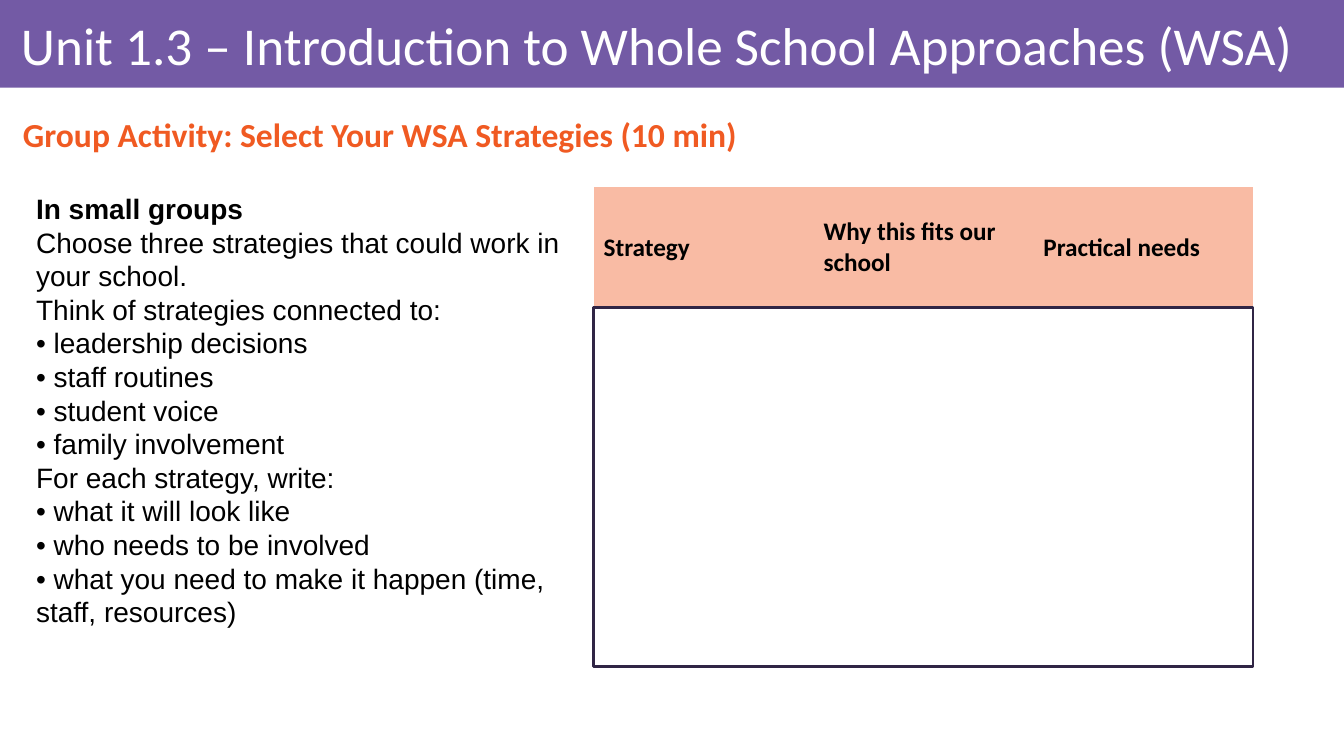
from dataclasses import dataclass

from pptx import Presentation
from pptx.dml.color import RGBColor
from pptx.enum.shapes import MSO_SHAPE as Shape
from pptx.enum.text import MSO_ANCHOR as Anchor
from pptx.oxml.ns import qn
from pptx.shapes.autoshape import Shape as AutoShape
from pptx.slide import Slide
from pptx.text.text import TextFrame, _Paragraph as Paragraph
from pptx.util import Cm, Pt

WHITE = RGBColor(0xFF, 0xFF, 0xFF)
BLACK = RGBColor(0x00, 0x00, 0x00)
PURPLE = RGBColor(0x73, 0x5A, 0xA5)
ORANGE = RGBColor(0xF0, 0x5A, 0x22)
PEACH = RGBColor(0xF9, 0xBB, 0xA4)
NAVY = RGBColor(0x30, 0x25, 0x45)

NO_STYLE_NO_GRID = "{2D5ABB26-0587-4C30-8999-92F81FD0307C}"


@dataclass(frozen=True)
class Box:
    """A place on the slide, in centimetres."""
    left: float
    top: float
    width: float
    height: float

    def lengths(self) -> tuple[Cm, Cm, Cm, Cm]:
        return Cm(self.left), Cm(self.top), Cm(self.width), Cm(self.height)


@dataclass(frozen=True)
class TextStyle:
    font: str
    size: float
    color: RGBColor
    bold: bool = False


TITLE = TextStyle("Calibri", 38, WHITE)
SUBTITLE = TextStyle("Calibri", 24, ORANGE, bold=True)
TABLE_HEADER = TextStyle("Calibri", 18, BLACK, bold=True)
BODY = TextStyle("Arial", 20, BLACK)
BODY_BOLD = TextStyle("Arial", 20, BLACK, bold=True)

SLIDE_WIDTH, SLIDE_HEIGHT = 33.87, 19.05
COLUMN_WIDTH, ROW_HEIGHT, ROW_COUNT = 5.54, 3.07, 4
HEADERS = ["Strategy", "Why this fits our school", "Practical needs"]
TABLE_BOX = Box(14.96, 4.7, COLUMN_WIDTH * len(HEADERS), ROW_HEIGHT * ROW_COUNT)
ANSWER_BOX = Box(14.96, 7.75, TABLE_BOX.width, 9.04)

INSTRUCTIONS = [
    [("In small groups", BODY_BOLD),
     ("Choose three strategies that could work in your school.", BODY)],
    [("Think of strategies connected to:", BODY),
     ("• leadership decisions", BODY),
     ("• staff routines", BODY),
     ("• student voice", BODY),
     ("• family involvement", BODY)],
    [("For each strategy, write:", BODY),
     ("• what it will look like", BODY),
     ("• who needs to be involved", BODY),
     ("• what you need to make it happen (time, staff, resources)", BODY)],
]


def add_run(paragraph: Paragraph, text: str, style: TextStyle) -> None:
    run = paragraph.add_run()
    run.text = text
    run.font.name = style.font
    run.font.size = Pt(style.size)
    run.font.bold = style.bold
    run.font.color.rgb = style.color


def add_text_frame(slide: Slide, box: Box, anchor: Anchor) -> TextFrame:
    frame = slide.shapes.add_textbox(*box.lengths()).text_frame
    frame.word_wrap = True
    frame.vertical_anchor = anchor
    return frame


def add_heading(slide: Slide, box: Box, text: str, style: TextStyle) -> None:
    paragraph = add_text_frame(slide, box, Anchor.MIDDLE).paragraphs[0]
    paragraph.line_spacing = 0.9
    add_run(paragraph, text, style)


def add_rectangle(slide: Slide, box: Box) -> AutoShape:
    rectangle = slide.shapes.add_shape(Shape.RECTANGLE, *box.lengths())
    rectangle.shadow.inherit = False
    return rectangle


def add_title_band(slide: Slide) -> None:
    band = add_rectangle(slide, Box(0, 0, SLIDE_WIDTH, 2.21))
    band.fill.solid()
    band.fill.fore_color.rgb = PURPLE
    band.line.fill.background()


def add_instructions(slide: Slide, box: Box) -> None:
    """Write each group as one paragraph, with a line break between its lines."""
    frame = add_text_frame(slide, box, Anchor.TOP)
    for group_index, group in enumerate(INSTRUCTIONS):
        paragraph = frame.add_paragraph() if group_index else frame.paragraphs[0]
        for line_index, (text, style) in enumerate(group):
            if line_index:
                paragraph.add_line_break()
            add_run(paragraph, text, style)


def add_strategy_table(slide: Slide) -> None:
    table = slide.shapes.add_table(
        ROW_COUNT, len(HEADERS), *TABLE_BOX.lengths()).table
    table.horz_banding = False
    table._tbl.tblPr.find(qn("a:tableStyleId")).text = NO_STYLE_NO_GRID
    for column in table.columns:
        column.width = Cm(COLUMN_WIDTH)
    for row in table.rows:
        row.height = Cm(ROW_HEIGHT)
    for cell in table.iter_cells():
        cell.fill.background()
    for cell, header in zip(table.rows[0].cells, HEADERS):
        cell.fill.solid()
        cell.fill.fore_color.rgb = PEACH
        cell.vertical_anchor = Anchor.MIDDLE
        add_run(cell.text_frame.paragraphs[0], header, TABLE_HEADER)


def add_answer_outline(slide: Slide) -> None:
    outline = add_rectangle(slide, ANSWER_BOX)
    outline.fill.background()
    outline.line.color.rgb = NAVY
    outline.line.width = Pt(2)


def main() -> None:
    presentation = Presentation()
    presentation.slide_width = Cm(SLIDE_WIDTH)
    presentation.slide_height = Cm(SLIDE_HEIGHT)
    slide = presentation.slides.add_slide(presentation.slide_layouts[6])

    add_title_band(slide)
    add_heading(slide, Box(0.28, 0.23, 33.17, 1.98),
                "Unit 1.3 – Introduction to Whole School Approaches (WSA)", TITLE)
    add_heading(slide, Box(0.33, 2.69, 32.5, 1.52),
                "Group Activity: Select Your WSA Strategies (10 min)", SUBTITLE)
    add_instructions(slide, Box(0.66, 4.7, 14.86, 11.38))
    add_strategy_table(slide)
    add_answer_outline(slide)

    presentation.save("out.pptx")


if __name__ == "__main__":
    main()
